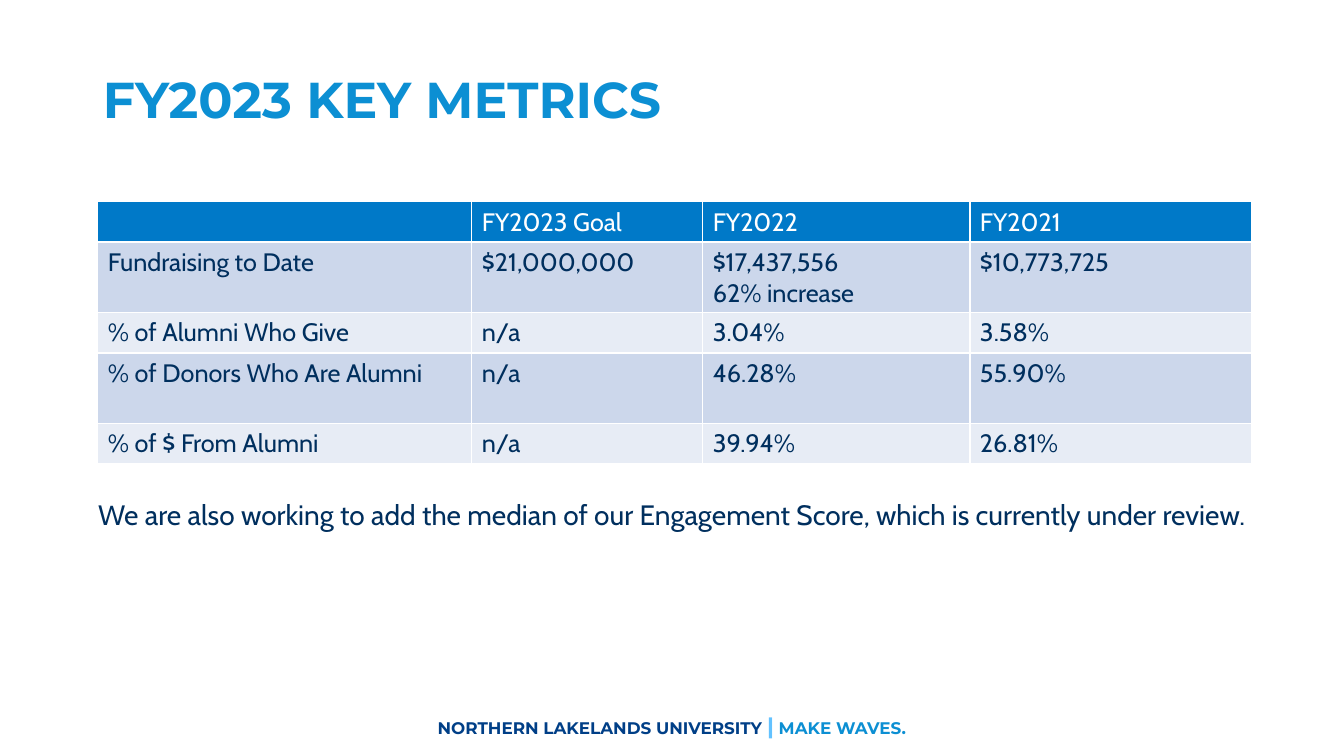
from pptx import Presentation
from pptx.dml.color import RGBColor
from pptx.enum.text import MSO_ANCHOR as Anchor, PP_ALIGN as Align
from pptx.util import Inches, Pt

NAVY = RGBColor(0x00, 0x2F, 0x5E)
ROYAL = RGBColor(0x00, 0x3F, 0x87)
BLUE = RGBColor(0x0C, 0x8F, 0xD3)
SKY = RGBColor(0x63, 0xC2, 0xFF)
HEAD = RGBColor(0x00, 0x79, 0xC8)
BANDS = [RGBColor(0xE7, 0xEC, 0xF5), RGBColor(0xCC, 0xD7, 0xEB)]
WHITE = RGBColor(0xFF, 0xFF, 0xFF)

WIDTH = 13.33
COLS = [3.71, 2.29, 2.65, 2.79]
ROWS = [0.4, 0.7, 0.4, 0.7, 0.4]
METRICS = [
    ["", "FY2023 Goal", "FY2022", "FY2021"],
    ["Fundraising to Date", "$21,000,000", "$17,437,556\n62% increase", "$10,773,725"],
    ["% of Alumni Who Give", "n/a", "3.04%", "3.58%"],
    ["% of Donors Who Are Alumni", "n/a", "46.28%", "55.90%"],
    ["% of $ From Alumni", "n/a", "39.94%", "26.81%"],
]


def write(para, text, size=18, color=NAVY, font="Cabin", bold=False):
    run = para.add_run()
    run.text = text
    run.font.size = Pt(size)
    run.font.name = font
    run.font.bold = bold
    run.font.color.rgb = color


def add_box(slide, x, y, w, h, anchor=Anchor.TOP):
    """Add a wrapping text box and return its centred first paragraph."""
    frame = slide.shapes.add_textbox(
        Inches(x), Inches(y), Inches(w), Inches(h)).text_frame
    frame.word_wrap = True
    frame.vertical_anchor = anchor
    para = frame.paragraphs[0]
    para.alignment = Align.CENTER
    return para


def add_title(slide, x, y, w, h):
    title = slide.shapes.title
    title.left, title.top = Inches(x), Inches(y)
    title.width, title.height = Inches(w), Inches(h)
    frame = title.text_frame
    frame.vertical_anchor = Anchor.MIDDLE
    para = frame.paragraphs[0]
    para.alignment = Align.LEFT
    para.line_spacing = 0.9
    write(para, "FY2023 KEY METRICS", size=36, color=BLUE, font="Montserrat", bold=True)


def fill_cell(cell, text, fill, color):
    cell.fill.solid()
    cell.fill.fore_color.rgb = fill
    frame = cell.text_frame
    for i, line in enumerate(text.split("\n")):
        para = frame.add_paragraph() if i else frame.paragraphs[0]
        if line:
            write(para, line, color=color)
        else:
            para.font.size = Pt(18)


def add_metrics(slide, x, y):
    table = slide.shapes.add_table(
        len(ROWS), len(COLS), Inches(x), Inches(y),
        Inches(sum(COLS)), Inches(sum(ROWS))).table
    for col, width in zip(table.columns, COLS):
        col.width = Inches(width)
    for r, (height, texts) in enumerate(zip(ROWS, METRICS)):
        table.rows[r].height = Inches(height)
        fill, color = (BANDS[r % 2], NAVY) if r else (HEAD, WHITE)
        for c, text in enumerate(texts):
            fill_cell(table.cell(r, c), text, fill, color)


def add_note(slide, x, y, w, h):
    write(add_box(slide, x, y, w, h),
          "We are also working to add the median of our Engagement Score, "
          "which is currently under review.", size=20)


def add_footer(slide, x, y, w, h):
    para = add_box(slide, x, y, w, h, Anchor.MIDDLE)
    for text, size, color in [
        ("NORTHERN LAKELANDS UNIVERSITY ", 12, ROYAL),
        ("|", 16, SKY),
        (" ", 12, ROYAL),
        ("MAKE WAVES.", 12, BLUE),
    ]:
        write(para, text, size=size, color=color, font="Montserrat", bold=True)


def main():
    deck = Presentation()
    deck.slide_width, deck.slide_height = Inches(WIDTH), Inches(7.5)
    slide = deck.slides.add_slide(deck.slide_layouts[5])
    add_footer(slide, 0, 7, WIDTH, 0.4)
    add_title(slide, 0.92, 0.29, 11.5, 1.45)
    add_metrics(slide, 0.97, 2)
    add_note(slide, 0, 4.89, WIDTH, 0.44)
    deck.save("out.pptx")


if __name__ == "__main__":
    main()
